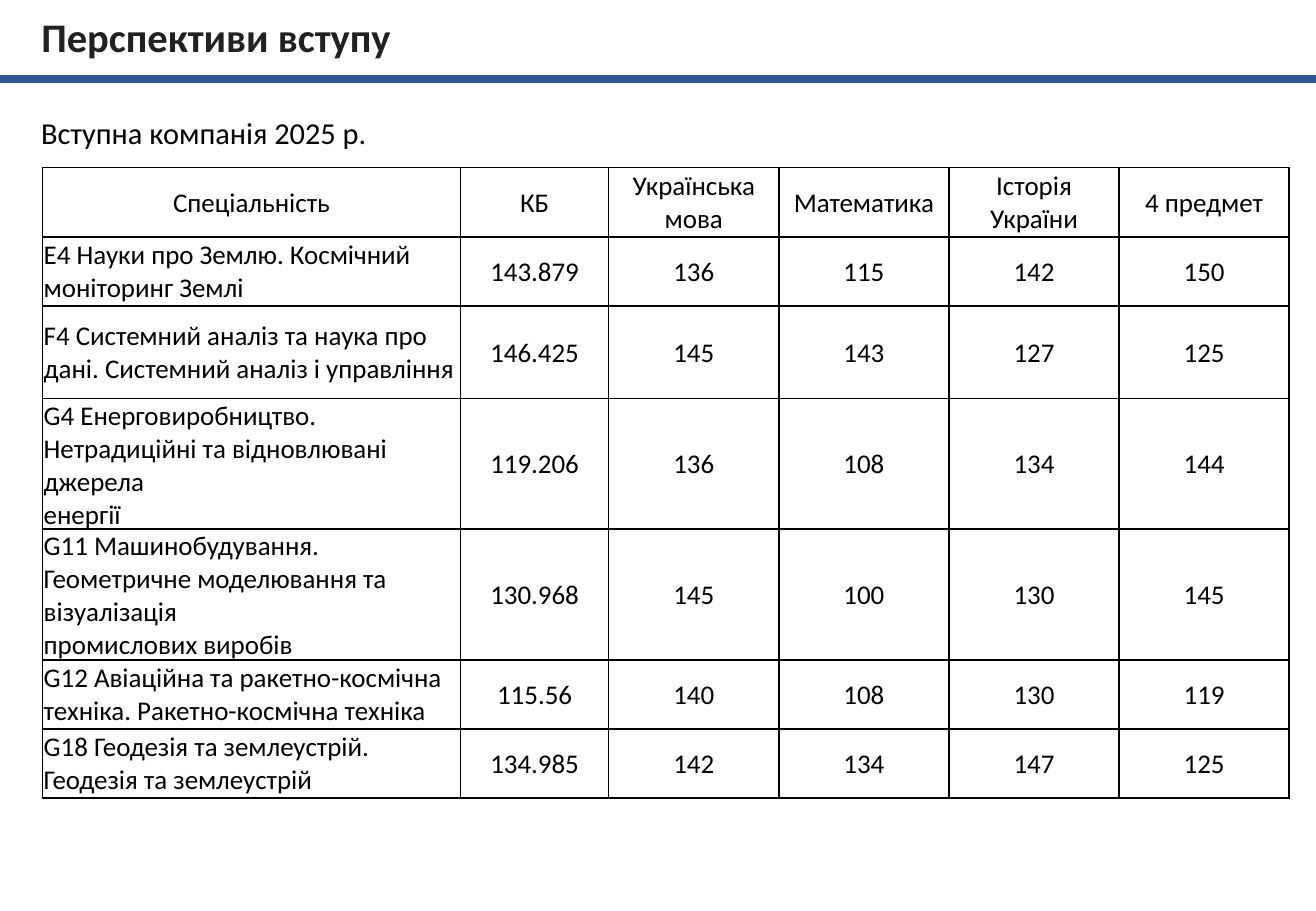
from copy import deepcopy

from lxml import etree
from pptx import Presentation
from pptx import util as u
from pptx.dml.color import RGBColor
from pptx.enum import shapes, text
from pptx.oxml.ns import qn

PX = 9144
FONT = "Calibri"
BLUE = RGBColor(0x2F, 0x55, 0x97)
INK = RGBColor(0x20, 0x21, 0x22)
BLACK = RGBColor(0, 0, 0)

COLS = [344, 122] + [140] * 4
ROWS = [57, 57, 76, 76, 95, 57, 57]
DATA = [
    ["Спеціальність", "КБ", "Українська мова", "Математика", "Історія України", "4 предмет"],
    ["E4 Науки про Землю. Космічний моніторинг Землі", "143.879", "136", "115", "142", "150"],
    ["F4 Системний аналіз та наука про дані. Системний аналіз і управління",
     "146.425", "145", "143", "127", "125"],
    ["G4 Енерговиробництво. Нетрадиційні та відновлювані джерела\vенергії",
     "119.206", "136", "108", "134", "144"],
    ["G11 Машинобудування. Геометричне моделювання та візуалізація\vпромислових виробів",
     "130.968", "145", "100", "130", "145"],
    ["G12 Авіаційна та ракетно-космічна техніка. Ракетно-космічна техніка",
     "115.56", "140", "108", "130", "119"],
    ["G18 Геодезія та землеустрій. Геодезія та землеустрій", "134.985", "142", "134", "147", "125"],
]


def px(*lengths):
    return [u.Emu(n * PX) for n in lengths]


def assign(obj, values):
    for name, value in values.items():
        setattr(obj, name, value)


def write(p, words, size, color, align, bold=False):
    p.text = words
    p.alignment = align
    for r in p.runs:
        assign(r.font, {"name": FONT, "size": u.Pt(size), "bold": bold})
        r.font.color.rgb = color
    for br in p._p.findall(qn("a:br")):
        br.append(deepcopy(p.runs[0].font._rPr))


def heading(s, box):
    x, y, w, h = box
    sp = s.shapes.title
    assign(sp, dict(zip(("left", "top", "width", "height"), px(x, y, w, h))))
    tf = sp.text_frame
    assign(tf, {"word_wrap": True, "vertical_anchor": text.MSO_ANCHOR.TOP,
                "auto_size": text.MSO_AUTO_SIZE.SHAPE_TO_FIT_TEXT})
    write(tf.paragraphs[0], "Перспективи вступу", 24, INK, text.PP_ALIGN.JUSTIFY, True)
    rule = s.shapes.add_connector(shapes.MSO_CONNECTOR.STRAIGHT,
                                  *px(0, y + h + 10, 1083, y + h + 10))
    rule.line.color.rgb = BLUE
    rule.line.width = u.Pt(5)
    etree.SubElement(rule._element.spPr, qn("a:effectLst"))


def caption(s, box):
    tf = s.shapes.add_textbox(*px(*box)).text_frame
    assign(tf, {"word_wrap": True, "auto_size": text.MSO_AUTO_SIZE.SHAPE_TO_FIT_TEXT})
    write(tf.paragraphs[0], "Вступна компанія 2025 р.", 18, BLACK, text.PP_ALIGN.LEFT)


def border(cell):
    tcPr = cell._tc.get_or_add_tcPr()
    for i, side in enumerate(("lnL", "lnR", "lnT", "lnB")):
        ln = etree.Element(qn("a:" + side), w=str(u.Pt(1)))
        fill = etree.SubElement(ln, qn("a:solidFill"))
        etree.SubElement(fill, qn("a:srgbClr"), val=str(BLACK))
        tcPr.insert(i, ln)


def scores(s, box):
    table = s.shapes.add_table(len(ROWS), len(COLS), *px(*box)).table
    assign(table, {"first_row": False, "horz_banding": False})
    for col, width in zip(table.columns, px(*COLS)):
        col.width = width
    for row, height in zip(table.rows, px(*ROWS)):
        row.height = height
    edge = u.Emu(PX)
    for i, line in enumerate(DATA):
        for j, words in enumerate(line):
            cell = table.cell(i, j)
            assign(cell, {"margin_left": edge, "margin_right": edge, "margin_top": edge,
                          "margin_bottom": 0, "vertical_anchor": text.MSO_ANCHOR.MIDDLE})
            cell.fill.background()
            border(cell)
            align = text.PP_ALIGN.LEFT if i and not j else text.PP_ALIGN.CENTER
            write(cell.text_frame.paragraphs[0], words, 16, BLACK, align)


def main():
    prs = Presentation()
    prs.slide_width, prs.slide_height = px(1083, 750)
    s = prs.slides.add_slide(prs.slide_layouts[5])
    heading(s, (24, 5, 1035, 50))
    caption(s, (24, 89, 544, 40))
    scores(s, (35, 138, sum(COLS), sum(ROWS)))
    prs.save("out.pptx")


if __name__ == "__main__":
    main()
